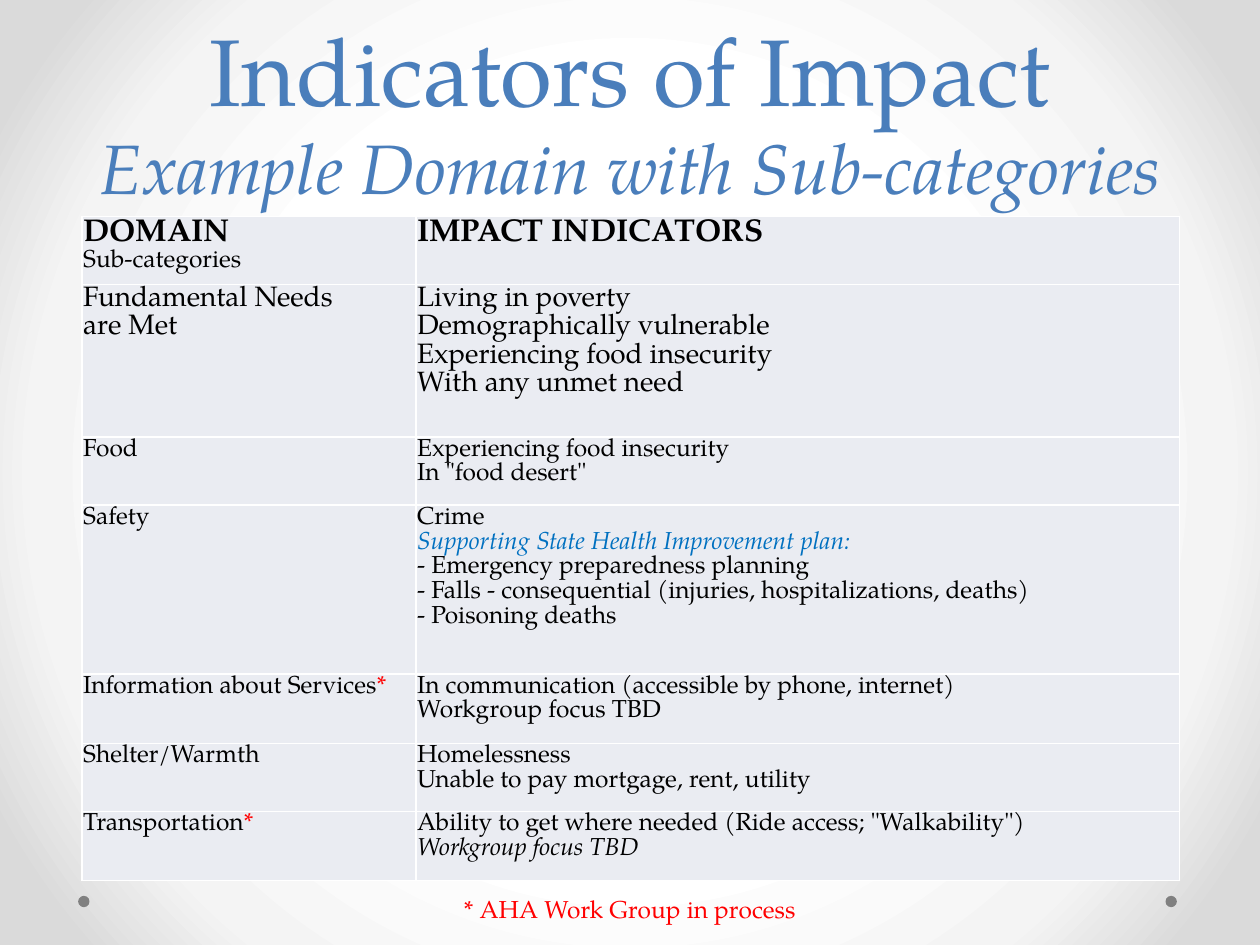
from lxml import etree
from pptx import Presentation
from pptx.dml.color import RGBColor
from pptx.enum.shapes import MSO_SHAPE
from pptx.enum.text import MSO_ANCHOR, MSO_AUTO_SIZE, PP_ALIGN
from pptx.oxml import parse_xml
from pptx.oxml.ns import nsdecls
from pptx.util import Inches, Pt

OVAL = MSO_SHAPE.OVAL
MIDDLE = MSO_ANCHOR.MIDDLE
CENTER = PP_ALIGN.CENTER
FIT_SHAPE = MSO_AUTO_SIZE.SHAPE_TO_FIT_TEXT

FONT = "TeX Gyre Pagella"
TITLE_BLUE = RGBColor(0x4A, 0x7E, 0xBB)
PLAN_BLUE = RGBColor(0x00, 0x70, 0xC0)
RED = RGBColor(0xFF, 0x00, 0x00)
BLACK = RGBColor(0x00, 0x00, 0x00)
GRAY = RGBColor(0x80, 0x80, 0x80)
CELL_FILL = RGBColor(0xEA, 0xEC, 0xF2)


def add_span(para, text, size, color=BLACK, bold=False, italic=False):
    """Add text in one format; each newline becomes a line break."""
    for index, line in enumerate(text.split("\n")):
        if index:
            para.add_line_break()
        if line:
            span = para.add_run()
            span.text = line
            font = span.font
            font.name, font.size = FONT, Pt(size)
            font.bold, font.italic = bold, italic
            font.color.rgb = color


def add_border(cell, side):
    """Draw one white cell edge; call before the cell is filled."""
    cell._tc.get_or_add_tcPr().append(parse_xml(
        f'<a:{side} {nsdecls("a")} w="12700"><a:solidFill>'
        f'<a:srgbClr val="FFFFFF"/></a:solidFill></a:{side}>'))


deck = Presentation()
deck.slide_width, deck.slide_height = Inches(10), Inches(7.5)
page = deck.slides.add_slide(deck.slide_layouts[5])

# Background: circular gradient from white to gray
page.background.fill.gradient()
gradient = page.background._cSld.bg.bgPr[0]
for child in list(gradient):
    gradient.remove(child)
stops = "".join(f'<a:gs pos="{pos}000"><a:srgbClr val="{color}"/></a:gs>'
                for pos, color in ((50, "FFFFFF"), (76, "F4F4F4"), (92, "DADADA")))
parts = etree.fromstring(
    f'<a:gradFill {nsdecls("a")}><a:gsLst>{stops}</a:gsLst><a:path path="circle">'
    '<a:fillToRect l="50000" t="50000" r="50000" b="50000"/></a:path></a:gradFill>')
for child in list(parts):
    gradient.append(child)

# Corner dots
for left in (0.62, 9.25):
    dot = page.shapes.add_shape(OVAL, Inches(left), Inches(7.11), Inches(0.09), Inches(0.09))
    dot.shadow.inherit = False
    dot.fill.solid()
    dot.fill.fore_color.rgb = GRAY
    dot.line.fill.background()

# Title
title = page.shapes.title
title.left, title.top = Inches(0.5), Inches(0)
title.width, title.height = Inches(9), Inches(1.75)
title.text_frame.vertical_anchor = MIDDLE
title.text_frame.word_wrap = True
para = title.text_frame.paragraphs[0]
para.alignment = CENTER
add_span(para, "Indicators of Impact\n", 54, TITLE_BLUE)
add_span(para, "Example Domain with Sub-categories", 40, TITLE_BLUE, italic=True)

# Table content: row height, then two cells of paragraphs of (text, size, format)
bold, italic, star = {"bold": True}, {"italic": True}, ("*", 14, {"color": RED})
plan = {"color": PLAN_BLUE, "italic": True}
rows = [
    (0.54, [[("DOMAIN", 18, bold)], [("Sub-categories", 14, {})]],
     [[("IMPACT INDICATORS", 18, bold)]]),
    (1.21, [[("Fundamental Needs", 16, {})], [("are Met", 16, {})]],
     [[("Living in poverty \nDemographically vulnerable\n"
        "Experiencing food insecurity\nWith any unmet need", 16, {})]]),
    (0.54, [[("Food", 14, {})]],
     [[('Experiencing food insecurity\nIn "food desert"', 14, {})]]),
    (1.34, [[("Safety", 14, {})]],
     [[("Crime\n", 14, {}),
       ("Supporting State Health Improvement plan:\n", 14, plan),
       ("- Emergency preparedness planning\n"
        "- Falls - consequential (injuries, hospitalizations, deaths)\n"
        "- Poisoning deaths", 14, {})]]),
    (0.55, [[("Information about Services", 14, {}), star]],
     [[("In communication (accessible by phone, internet)\n"
        "Workgroup focus TBD", 14, {})]]),
    (0.54, [[("Shelter/Warmth", 14, {})]],
     [[("Homelessness\nUnable to pay mortgage, rent, utility", 14, {})]]),
    (0.55, [[("Transportation", 14, {}), star]],
     [[('Ability to get where needed (Ride access; "Walkability")\n', 14, {}),
       ("Workgroup focus TBD", 14, italic)]]),
]

# Table
table = page.shapes.add_table(len(rows), 2, Inches(0.65), Inches(1.72),
                              Inches(8.71), Inches(5.27)).table
table.first_row = table.horz_banding = False
for column, width in zip(table.columns, (2.65, 6.06)):
    column.width = Inches(width)
for row, (height, *cells) in zip(table.rows, rows):
    row.height = Inches(height)
    for cell, paragraphs in zip(row.cells, cells):
        cell.margin_left = cell.margin_right = cell.margin_top = Inches(0.01)
        cell.margin_bottom = Inches(0)
        for side in ("lnL", "lnR", "lnT", "lnB"):
            add_border(cell, side)
        cell.fill.solid()
        cell.fill.fore_color.rgb = CELL_FILL
        for index, spans in enumerate(paragraphs):
            para = cell.text_frame.add_paragraph() if index else cell.text_frame.paragraphs[0]
            para.line_spacing = Pt(spans[0][1] * 1.01)
            for text, size, style in spans:
                add_span(para, text, size, **style)

# Footnote
note = page.shapes.add_textbox(Inches(3.58), Inches(7.05), Inches(2.84), Inches(0.34))
note.text_frame.word_wrap = False
note.text_frame.auto_size = FIT_SHAPE
para = note.text_frame.paragraphs[0]
para.alignment = CENTER
add_span(para, "* AHA Work Group in process", 14, RED)

deck.save("out.pptx")
